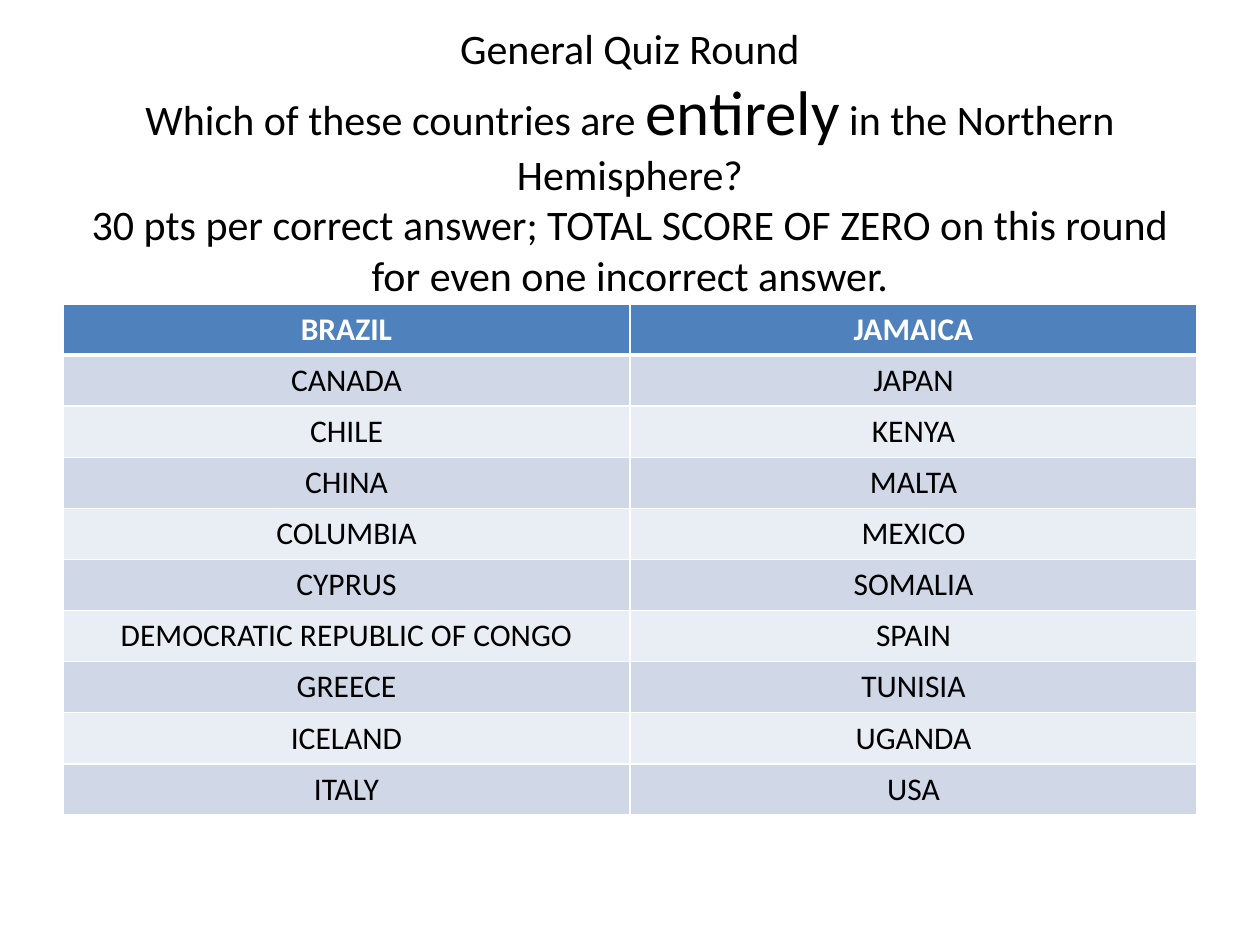
import dataclasses

import lxml.etree
import pptx
import pptx.dml.color
import pptx.enum.text
import pptx.oxml.ns
import pptx.util

EMU_PER_INCH = 914400
PX_PER_INCH = 126


@dataclasses.dataclass(frozen=True)
class Theme:
    font: str = "Calibri"
    ink: str = "000000"
    white: str = "FFFFFF"
    header: str = "4F81BD"
    bands: tuple = ("E9EDF4", "D0D8E8")
    title_size: int = 24
    emphasis_size: int = 36
    table_size: int = 18
    rule: int = 1
    header_rule: int = 3


THEME = Theme()

# Each title line is a list of (text, type size) spans.
TITLE_LINES = [
    [("General Quiz Round", THEME.title_size)],
    [
        ("Which of these countries are ", THEME.title_size),
        ("entirely", THEME.emphasis_size),
        (" in the Northern Hemisphere?", THEME.title_size),
    ],
    [
        (
            "30 pts per correct answer; TOTAL SCORE OF ZERO on this round "
            "for even one incorrect answer.",
            THEME.title_size,
        )
    ],
]

COUNTRIES = [
    ("BRAZIL", "JAMAICA"),
    ("CANADA", "JAPAN"),
    ("CHILE", "KENYA"),
    ("CHINA", "MALTA"),
    ("COLUMBIA", "MEXICO"),
    ("CYPRUS", "SOMALIA"),
    ("DEMOCRATIC REPUBLIC OF CONGO", "SPAIN"),
    ("GREECE", "TUNISIA"),
    ("ICELAND", "UGANDA"),
    ("ITALY", "USA"),
]


def px(length):
    return pptx.util.Emu(round(length * EMU_PER_INCH / PX_PER_INCH))


def rgb(color):
    return pptx.dml.color.RGBColor.from_string(color)


def format_span(span, size, color, bold=False):
    span.font.name = THEME.font
    span.font.size = pptx.util.Pt(size)
    span.font.color.rgb = rgb(color)
    span.font.bold = bold


def add_break(para, size):
    """Add a line break whose own type size does not stretch the line."""
    para.add_line_break()
    line_break = para._p.findall(pptx.oxml.ns.qn("a:br"))[-1]
    props = lxml.etree.SubElement(line_break, pptx.oxml.ns.qn("a:rPr"))
    props.set("sz", str(size * 100))


def fill_title(title, left, top, width, height):
    title.left, title.top = px(left), px(top)
    title.width, title.height = px(width), px(height)
    frame = title.text_frame
    frame.word_wrap = True
    frame.auto_size = pptx.enum.text.MSO_AUTO_SIZE.NONE
    frame.vertical_anchor = pptx.enum.text.MSO_ANCHOR.MIDDLE
    para = frame.paragraphs[0]
    para.alignment = pptx.enum.text.PP_ALIGN.CENTER
    for index, line in enumerate(TITLE_LINES):
        if index:
            add_break(para, THEME.title_size)
        for text, size in line:
            span = para.add_run()
            span.text = text
            format_span(span, size, THEME.ink)


def set_borders(cell, widths):
    """Draw white borders; widths maps the sides L, R, T, B to points."""
    qn = pptx.oxml.ns.qn
    props = cell._tc.get_or_add_tcPr()
    for side, width in widths.items():
        line = lxml.etree.SubElement(props, qn(f"a:ln{side}"))
        line.set("w", str(pptx.util.Pt(width)))
        solid = lxml.etree.SubElement(line, qn("a:solidFill"))
        lxml.etree.SubElement(solid, qn("a:srgbClr")).set("val", THEME.white)


def fill_cell(cell, text, row):
    is_header = row == 0
    set_borders(cell, {
        "L": THEME.rule,
        "R": THEME.rule,
        "T": THEME.header_rule if row == 1 else THEME.rule,
        "B": THEME.header_rule if is_header else THEME.rule,
    })
    cell.fill.solid()
    cell.fill.fore_color.rgb = rgb(THEME.header if is_header else THEME.bands[row % 2])
    para = cell.text_frame.paragraphs[0]
    para.text = text
    para.alignment = pptx.enum.text.PP_ALIGN.CENTER
    color = THEME.white if is_header else THEME.ink
    format_span(para.runs[0], THEME.table_size, color, bold=is_header)


def add_country_table(page, left, top, width, row_height):
    rows, columns = len(COUNTRIES), len(COUNTRIES[0])
    table = page.shapes.add_table(
        rows, columns, px(left), px(top), px(width), px(row_height * rows)
    ).table
    for row, names in enumerate(COUNTRIES):
        for column, name in enumerate(names):
            fill_cell(table.cell(row, column), name, row)


def main():
    deck = pptx.Presentation()
    deck.slide_width, deck.slide_height = px(1260), px(945)
    page = deck.slides.add_slide(deck.slide_layouts.get_by_name("Title Only"))
    fill_title(page.shapes.title, 63, 38, 1134, 246)
    add_country_table(page, 63, 304, 1134, 51)
    deck.save("out.pptx")


if __name__ == "__main__":
    main()
